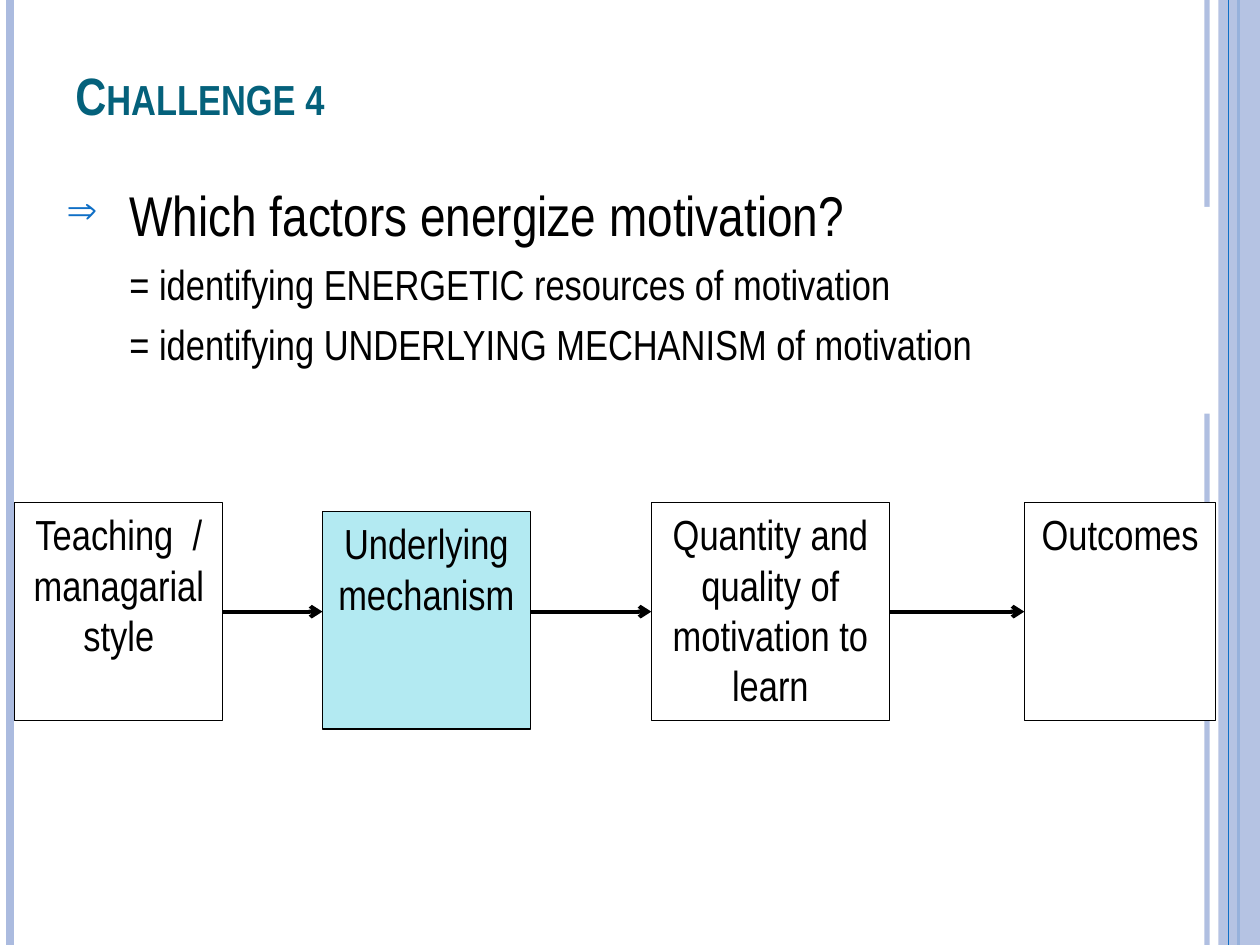
from dataclasses import dataclass
from itertools import pairwise

from lxml import etree
from pptx import Presentation
from pptx import util as u
from pptx.dml.color import RGBColor
from pptx.enum import shapes, text
from pptx.oxml import ns

FONT = "Arial Narrow"
WIDTH, HEIGHT = 25.4, 19.05
BOX_TOP, BOX_HEIGHT = 10.13, 4.39
ARROW_Y = 12.33
COLORS = {
    "white": "FFFFFF",
    "black": "000000",
    "stripe": "ABBBDF",
    "accent": "0F6FC6",
    "title": "04617B",
    "highlight": "B3EAF2",
}


@dataclass
class Stripe:
    x: float
    color: str
    points: float
    opacity: int = 100


@dataclass
class Box:
    label: str
    left: float
    width: float
    top: float = BOX_TOP
    fill: str = "white"


@dataclass
class BodyLine:
    wording: str
    points: float
    bullet: str = ""


LEFT_STRIPES = [
    Stripe(24.33, "stripe", 3, 93),
    Stripe(0.2, "stripe", 4.5),
    Stripe(24.97, "accent", 1.5),
]
BAND_EDGE = Stripe(24.77, "accent", 0.75)

BOXES = [
    Box("Teaching  / managarial style", 0.3, 4.19),
    Box("Underlying mechanism", 6.5, 4.19, 10.31, "highlight"),
    Box("Quantity and quality of motivation to learn", 13.13, 4.8),
    Box("Outcomes", 20.65, 3.86),
]

BODY = [
    BodyLine("Which factors energize motivation?", 32, "⇒"),
    BodyLine("= identifying ENERGETIC resources of motivation", 24),
    BodyLine("= identifying UNDERLYING MECHANISM of motivation", 24),
]


def rgb(name: str) -> RGBColor:
    return RGBColor.from_string(COLORS[name])


def add_element(parent, tag: str, **attributes: str):
    element = etree.SubElement(parent, ns.qn(tag))
    for key, value in attributes.items():
        element.set(key, value)
    return element


def set_opacity(owner, percent: int) -> None:
    for color in owner.iter(ns.qn("a:srgbClr")):
        add_element(color, "a:alpha", val=str(percent * 1000))


def format_runs(paragraph, points: float, color: str, bold: bool = False) -> None:
    for run in paragraph.runs:
        run.font.name = FONT
        run.font.size = u.Pt(points)
        run.font.bold = bold
        run.font.color.rgb = rgb(color)


def add_line(slide, start: tuple, end: tuple, color: str, points: float):
    line = slide.shapes.add_connector(
        shapes.MSO_CONNECTOR.STRAIGHT, *map(u.Cm, (*start, *end))
    )
    line.line.color.rgb = rgb(color)
    line.line.width = u.Pt(points)
    add_element(line._element.spPr, "a:effectLst")
    return line


def add_stripe(slide, stripe: Stripe) -> None:
    line = add_line(
        slide, (stripe.x, 0), (stripe.x, HEIGHT), stripe.color, stripe.points
    )
    if stripe.opacity < 100:
        set_opacity(line._element.spPr, stripe.opacity)


def add_arrow(slide, source: Box, target: Box) -> None:
    start = (source.left + source.width, ARROW_Y)
    arrow = add_line(slide, start, (target.left, ARROW_Y), "black", 2.25)
    add_element(arrow.line._get_or_add_ln(), "a:tailEnd", type="arrow")


def add_rectangle(
    slide, left: float, top: float, width: float, height: float, fill: str
):
    shape = slide.shapes.add_shape(
        shapes.MSO_SHAPE.RECTANGLE, *map(u.Cm, (left, top, width, height))
    )
    shape.shadow.inherit = False
    shape.fill.solid()
    shape.fill.fore_color.rgb = rgb(fill)
    shape.line.fill.background()
    return shape


def add_box(slide, box: Box) -> None:
    shape = add_rectangle(slide, box.left, box.top, box.width, BOX_HEIGHT, box.fill)
    shape.line.color.rgb = rgb("black")
    shape.line.width = u.Pt(0.75)
    text_frame = shape.text_frame
    text_frame.word_wrap = True
    text_frame.vertical_anchor = text.MSO_ANCHOR.TOP
    text_frame.text = box.label
    paragraph = text_frame.paragraphs[0]
    paragraph.alignment = text.PP_ALIGN.CENTER
    format_runs(paragraph, 24, "black")


def add_text_frame(slide, left: float, top: float, width: float, height: float):
    shape = slide.shapes.add_textbox(*map(u.Cm, (left, top, width, height)))
    shape.text_frame.word_wrap = True
    return shape.text_frame


def add_title(slide, wording: str) -> None:
    text_frame = add_text_frame(slide, 1.27, 0.76, 20.75, 3.18)
    text_frame.vertical_anchor = text.MSO_ANCHOR.BOTTOM
    text_frame.margin_bottom = u.Cm(1.4)
    text_frame.text = wording
    paragraph = text_frame.paragraphs[0]
    format_runs(paragraph, 30, "title", bold=True)
    paragraph.runs[0].font._element.set("cap", "small")


def add_body(slide, lines: list[BodyLine]) -> None:
    text_frame = add_text_frame(slide, 1.09, 3.51, 20.75, 9.65)
    text_frame.text = "\n".join(line.wording for line in lines)
    for index, (line, paragraph) in enumerate(zip(lines, text_frame.paragraphs)):
        properties = paragraph._element.get_or_add_pPr()
        properties.set("marL", str(u.Cm(1.27)))
        if index:
            paragraph.space_before = u.Pt(6)
        if line.bullet:
            properties.set("indent", str(-u.Cm(1.27)))
            bullet_color = add_element(properties, "a:buClr")
            add_element(bullet_color, "a:srgbClr", val=COLORS["accent"])
            add_element(properties, "a:buSzPct", val="70000")
            add_element(properties, "a:buChar", char=line.bullet)
        format_runs(paragraph, line.points, "black")


def main() -> None:
    presentation = Presentation()
    presentation.slide_width = u.Cm(WIDTH)
    presentation.slide_height = u.Cm(HEIGHT)
    slide = presentation.slides.add_slide(presentation.slide_layouts[6])

    for stripe in LEFT_STRIPES:
        add_stripe(slide, stripe)
    band = add_rectangle(slide, 24.56, 0, 0.84, HEIGHT, "stripe")
    set_opacity(band._element.spPr, 87)
    add_stripe(slide, BAND_EDGE)

    for box in BOXES:
        add_box(slide, box)
    for source, target in pairwise(BOXES):
        add_arrow(slide, source, target)

    add_rectangle(slide, 0.79, 4.17, 23.62, 4.17, "white")
    add_title(slide, "Challenge 4")
    add_body(slide, BODY)
    presentation.save("out.pptx")


if __name__ == "__main__":
    main()
